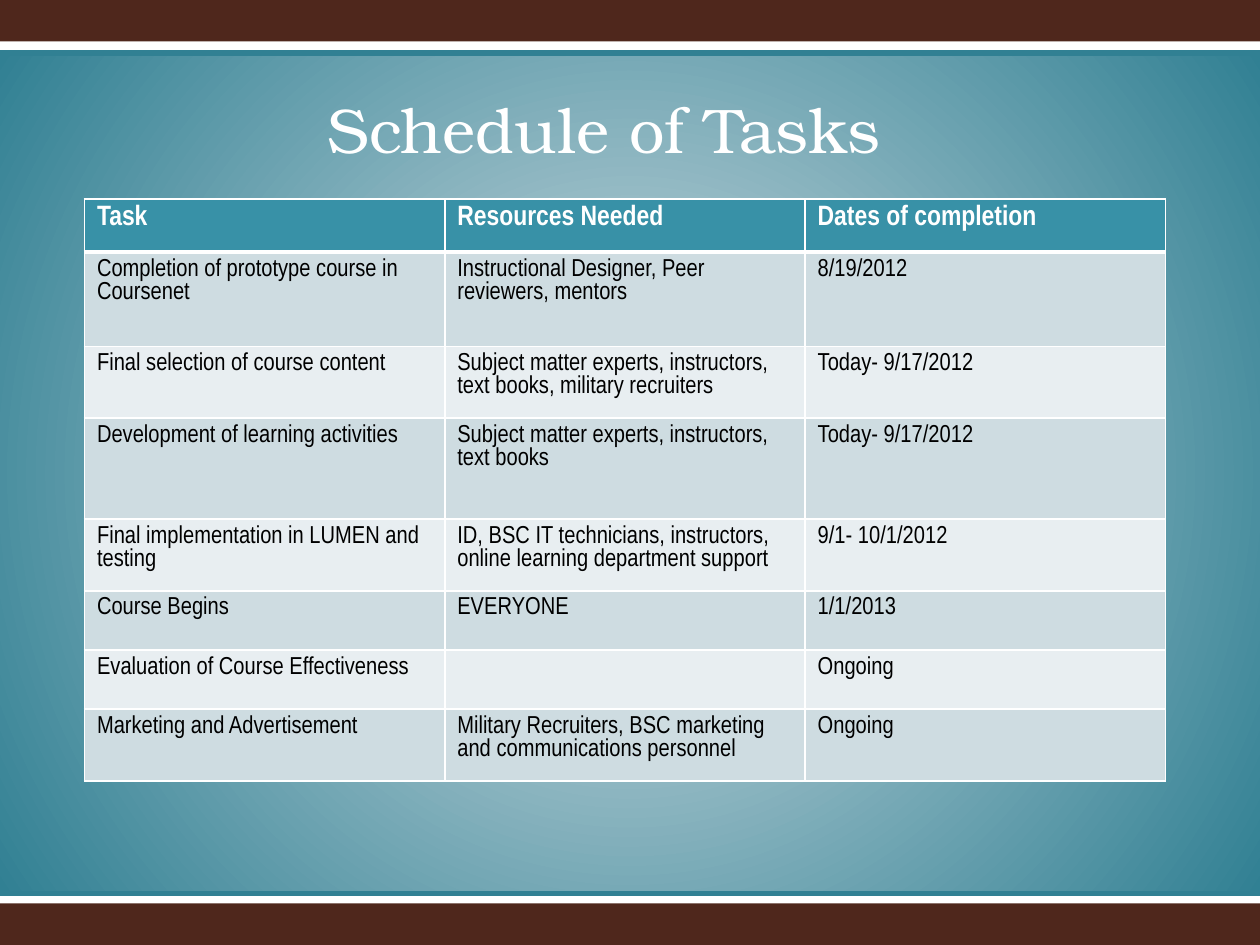
import pptx
import pptx.dml.color
import pptx.enum.shapes
import pptx.enum.text
import pptx.oxml
import pptx.oxml.ns
import pptx.util
from lxml import etree

RGB = pptx.dml.color.RGBColor
WHITE = RGB(0xFF, 0xFF, 0xFF)
BLACK = RGB(0, 0, 0)
BROWN = RGB(0x4F, 0x27, 0x1C)
TEAL = RGB(0x31, 0x80, 0x93)
HEADER_TEAL = RGB(0x38, 0x91, 0xA7)
MIST = RGB(0xCE, 0xDC, 0xE1)
PALE = RGB(0xE8, 0xEE, 0xF1)

WIDTH, HEIGHT = 10, 7.5
BAND = 0.33
PANEL_TOP, PANEL_BOTTOM = 0.42, 7.09
TITLE_FONT, TABLE_FONT = "TeX Gyre Bonum", "Arial Narrow"
COLUMN_WIDTH = 2.86

# Row height, then the three cells
SCHEDULE = [
    (0.42, "Task", "Resources Needed", "Dates of completion"),
    (0.75, "Completion of prototype course in Coursenet",
     "Instructional Designer, Peer reviewers, mentors", "8/19/2012"),
    (0.57, "Final selection of course content",
     "Subject matter experts, instructors, text books, military recruiters",
     "Today- 9/17/2012"),
    (0.8, "Development of learning activities",
     "Subject matter experts, instructors, text books", "Today- 9/17/2012"),
    (0.57, "Final implementation in LUMEN and testing",
     "ID, BSC IT technicians, instructors, online learning department support",
     "9/1- 10/1/2012"),
    (0.47, "Course Begins", "EVERYONE", "1/1/2013"),
    (0.47, "Evaluation of Course Effectiveness", "", "Ongoing"),
    (0.57, "Marketing and Advertisement",
     "Military Recruiters, BSC marketing and communications personnel", "Ongoing"),
]


def inches(*lengths):
    return [pptx.util.Inches(length) for length in lengths]


def add_band(slide, top, height):
    """Add a borderless full-width rectangle."""
    band = slide.shapes.add_shape(
        pptx.enum.shapes.MSO_SHAPE.RECTANGLE, *inches(0, top, WIDTH, height))
    band.shadow.inherit = False
    band.line.fill.background()
    band.fill.solid()
    band.fill.fore_color.rgb = BROWN
    return band


def fill_radially(shape, first, last):
    shape.fill.gradient()
    for stop, color in zip(shape.fill.gradient_stops, (first, last)):
        stop.color.rgb = color
    gradient = shape.fill._xPr.find(pptx.oxml.ns.qn("a:gradFill"))
    gradient.remove(gradient.find(pptx.oxml.ns.qn("a:lin")))
    gradient.append(pptx.oxml.parse_xml(
        f'<a:path {pptx.oxml.ns.nsdecls("a")} path="circle">'
        '<a:fillToRect l="100000" t="100000" r="100000" b="100000"/></a:path>'))


def add_rule(slide, y):
    rule = slide.shapes.add_connector(
        pptx.enum.shapes.MSO_CONNECTOR.STRAIGHT, *inches(0, y, WIDTH, y))
    rule.line.color.rgb = TEAL
    rule.line.width = pptx.util.Pt(3)
    etree.SubElement(rule._element.spPr, pptx.oxml.ns.qn("a:effectLst"))


def format_font(font, name, size, color, bold=False):
    font.name, font.size, font.bold = name, pptx.util.Pt(size), bold
    font.color.rgb = color


def add_title(slide, text):
    title = slide.shapes.add_textbox(*inches(2.17, 0.67, 5.25, 0.71)).text_frame
    title.word_wrap = True
    title.text = text
    heading = title.paragraphs[0]
    heading.alignment = pptx.enum.text.PP_ALIGN.CENTER
    format_font(heading.runs[0].font, TITLE_FONT, 36, WHITE)


def set_borders(cell, bottom):
    """Draw white cell borders, 1 pt except for the bottom one."""
    properties = cell._tc.get_or_add_tcPr()
    widths = {"lnL": 1, "lnR": 1, "lnT": 1, "lnB": bottom}
    for position, (side, width) in enumerate(widths.items()):
        properties.insert(position, pptx.oxml.parse_xml(
            f'<a:{side} {pptx.oxml.ns.nsdecls("a")} w="{pptx.util.Pt(width)}">'
            f'<a:solidFill><a:srgbClr val="{WHITE}"/></a:solidFill></a:{side}>'))


def format_cell(cell, text, fill, is_header):
    cell.text = text
    for run in cell.text_frame.paragraphs[0].runs:
        format_font(run.font, TABLE_FONT, 16 if is_header else 14,
                    WHITE if is_header else BLACK, is_header)
    cell.fill.solid()
    cell.fill.fore_color.rgb = fill
    set_borders(cell, 3 if is_header else 1)


def add_schedule(slide):
    columns = len(SCHEDULE[0]) - 1
    total_height = sum(task[0] for task in SCHEDULE)
    schedule = slide.shapes.add_table(
        len(SCHEDULE), columns,
        *inches(0.67, 1.58, columns * COLUMN_WIDTH, total_height)).table
    for column in schedule.columns:
        column.width = pptx.util.Inches(COLUMN_WIDTH)
    for index, (height, *entries) in enumerate(SCHEDULE):
        schedule.rows[index].height = pptx.util.Inches(height)
        is_header = index == 0
        fill = HEADER_TEAL if is_header else (PALE, MIST)[index % 2]
        for cell, text in zip(schedule.rows[index].cells, entries):
            format_cell(cell, text, fill, is_header)


def main():
    deck = pptx.Presentation()
    deck.slide_width, deck.slide_height = inches(WIDTH, HEIGHT)
    slide = deck.slides.add_slide(deck.slide_layouts[6])
    panel = add_band(slide, PANEL_TOP, PANEL_BOTTOM - PANEL_TOP)
    fill_radially(panel, MIST, TEAL)
    for top in (0, HEIGHT - BAND):
        add_band(slide, top, BAND)
    for y in (PANEL_TOP, PANEL_BOTTOM):
        add_rule(slide, y)
    add_title(slide, "Schedule of Tasks")
    add_schedule(slide)
    deck.save("out.pptx")


if __name__ == "__main__":
    main()
